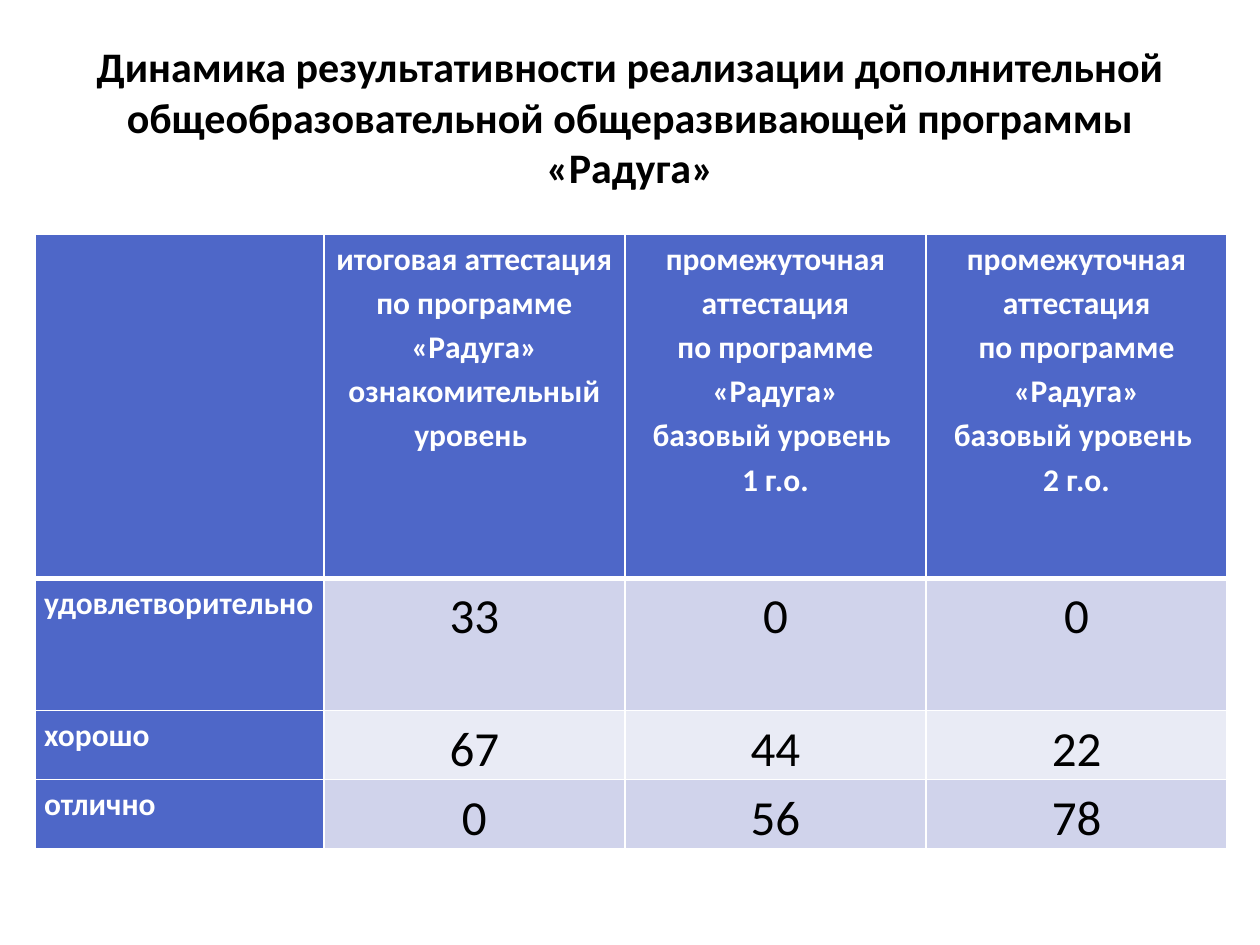
from lxml.etree import SubElement
from pptx import Presentation
from pptx.dml.color import RGBColor
from pptx.enum.text import MSO_ANCHOR, PP_ALIGN
from pptx.oxml.ns import qn
from pptx.util import Inches, Pt

FONT = "Calibri"
WHITE, BLACK, BLUE = "FFFFFF", "000000", "4E67C8"
BANDS = ["D0D3EB", "E9EBF5"]
TITLE = ("Динамика результативности реализации дополнительной "
         "общеобразовательной общеразвивающей программы «Радуга»")
PROGRAM = "по программе «Радуга»"
INTERIM = ["промежуточная аттестация", PROGRAM, "базовый уровень "]
HEADERS = [
    [],
    ["итоговая аттестация", PROGRAM, "ознакомительный уровень "],
    INTERIM + ["1 г.о."],
    INTERIM + ["2 г.о."],
]
RESULTS = [
    ("удовлетворительно", 33, 0, 0),
    ("хорошо", 67, 44, 22),
    ("отлично", 0, 56, 78),
]
COLUMNS = [2.29, 2.39, 2.39, 2.39]
ROWS = [2.73, 1.05, 0.51, 0.51]


def color(value):
    return RGBColor.from_string(value)


def style_runs(p, size, value, bold):
    for r in p.runs:
        r.font.name = FONT
        r.font.size = Pt(size)
        r.font.bold = bold
        r.font.color.rgb = color(value)


def add_borders(cell, widths):
    tc_pr = cell._tc.get_or_add_tcPr()
    for i, (side, width) in enumerate(zip("LRTB", widths)):
        ln = SubElement(tc_pr, qn(f"a:ln{side}"), w=str(Pt(width)))
        fill = SubElement(ln, qn("a:solidFill"))
        SubElement(fill, qn("a:srgbClr"), val=WHITE)
        tc_pr.insert(i, ln)


def fill_cell(cell, lines, fill, size, value, bold, align, widths):
    cell.margin_left = cell.margin_right = Inches(0.07)
    cell.margin_top = cell.margin_bottom = 0
    cell.fill.solid()
    cell.fill.fore_color.rgb = color(fill)
    add_borders(cell, widths)
    tf = cell.text_frame
    tf.text = "\n".join(lines)
    for p in tf.paragraphs:
        p.alignment = align
        p.line_spacing = 1.15
        style_runs(p, size, value, bold)


def add_title(s, left, top, width, height):
    sp = s.shapes.title
    sp.left, sp.top = Inches(left), Inches(top)
    sp.width, sp.height = Inches(width), Inches(height)
    tf = sp.text_frame
    tf.text = TITLE
    tf.word_wrap = True
    tf.vertical_anchor = MSO_ANCHOR.MIDDLE
    p = tf.paragraphs[0]
    p.alignment = PP_ALIGN.CENTER
    style_runs(p, 24, BLACK, True)


def add_results(s, left, top, width, height):
    table = s.shapes.add_table(
        len(ROWS), len(COLUMNS), Inches(left), Inches(top),
        Inches(width), Inches(height)).table
    for column, share in zip(table.columns, COLUMNS):
        column.width = Inches(width * share / sum(COLUMNS))
    for row, share in zip(table.rows, ROWS):
        row.height = Inches(height * share / sum(ROWS))
    for col, lines in enumerate(HEADERS):
        fill_cell(table.cell(0, col), lines, BLUE, 18, WHITE, True,
                  PP_ALIGN.CENTER, (1, 1, 1, 3))
    for row, (grade, *values) in enumerate(RESULTS, 1):
        widths = (1, 1, 3 if row == 1 else 1, 1)
        fill_cell(table.cell(row, 0), [grade], BLUE, 18, WHITE, True,
                  PP_ALIGN.LEFT, widths)
        for col, number in enumerate(values, 1):
            fill_cell(table.cell(row, col), [str(number)],
                      BANDS[(row - 1) % 2], 28, BLACK, False,
                      PP_ALIGN.CENTER, widths)


def main():
    prs = Presentation()
    prs.slide_width, prs.slide_height = Inches(10), Inches(7.5)
    s = prs.slides.add_slide(prs.slide_layouts[5])
    add_title(s, 0.5, 0.3, 9, 1.25)
    add_results(s, 0.28, 1.86, sum(COLUMNS), sum(ROWS))
    prs.save("out.pptx")


if __name__ == "__main__":
    main()
